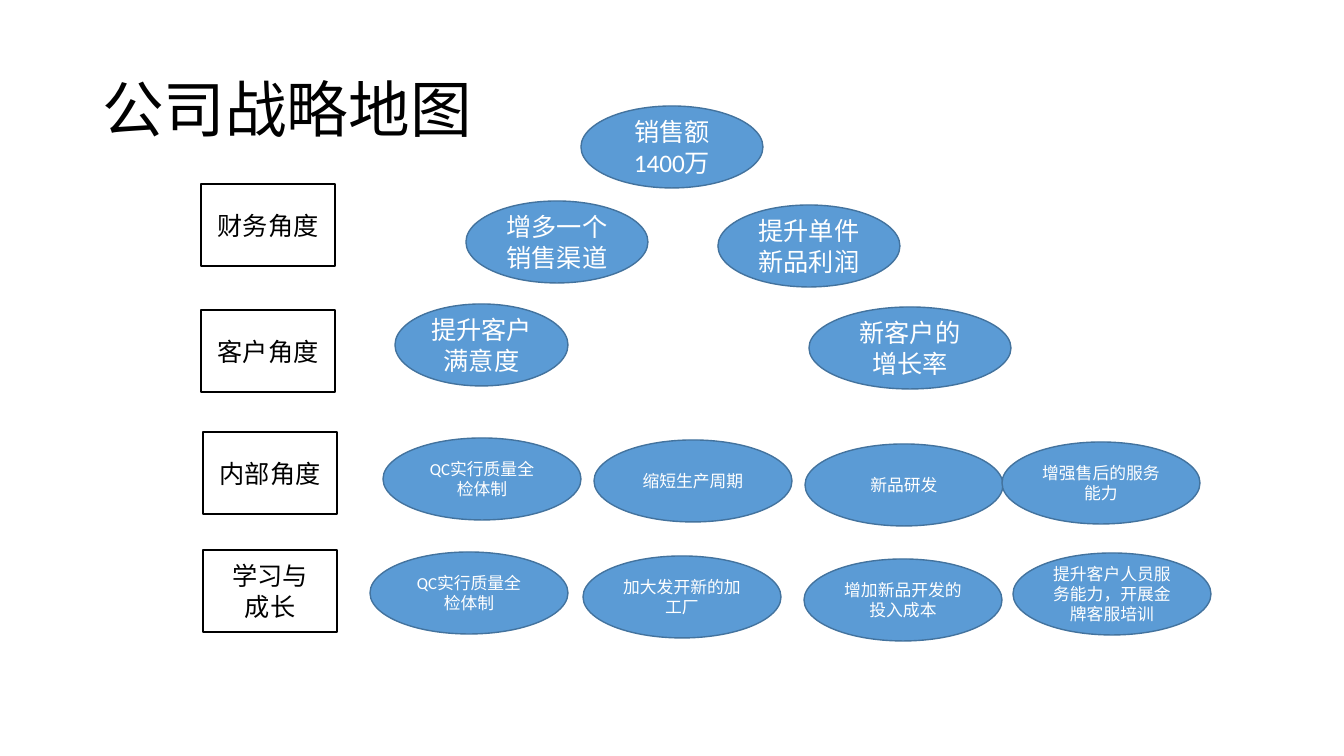
from pptx import Presentation
from pptx.dml.color import RGBColor
from pptx.enum.shapes import MSO_SHAPE
from pptx.enum.text import MSO_ANCHOR, MSO_AUTO_SIZE, PP_ALIGN
from pptx.util import Pt

RECT, OVAL = MSO_SHAPE.RECTANGLE, MSO_SHAPE.OVAL
MIDDLE, CENTER, LEFT = MSO_ANCHOR.MIDDLE, PP_ALIGN.CENTER, PP_ALIGN.LEFT
NO_FIT = MSO_AUTO_SIZE.NONE

FONT = "Calibri"
COLORS = {"goal": "5B9BD5", "goal_line": "43739E", "white": "FFFFFF", "black": "000000"}
EMU_PER_PX = 914400 / 100.8
LABEL_W, ROW_H = 134, 82

# Row: left, top, label lines, goal width, text size, goals (dx, dy, text)
ROWS = [
    (201, 184, ["财务角度"], 182, 18, [
        (380, -78, "销售额1400万"),
        (265, 17, "增多一个销售渠道"),
        (517, 21, "提升单件新品利润")]),
    (201, 310, ["客户角度"], 173, 18, [
        (194, -6, "提升客户满意度"),
        (608, -3, "新客户的增长率", 202)]),
    (203, 432, ["内部角度"], 198, 12, [
        (180, 6, "QC实行质量全检体制"),
        (391, 8, "缩短生产周期"),
        (602, 12, "新品研发"),
        (799, 10, "增强售后的服务能力")]),
    (203, 550, ["学习与", "成长"], 198, 12, [
        (167, 2, "QC实行质量全检体制"),
        (380, 6, "加大发开新的加工厂"),
        (601, 9, "增加新品开发的投入成本"),
        (810, 3, "提升客户人员服务能力，开展金牌客服培训")]),
]


def px(n):
    return round(n * EMU_PER_PX)


def rgb(name):
    return RGBColor.from_string(COLORS[name])


def write(tf, lines, size, color, align):
    tf.word_wrap = True
    tf.auto_size = NO_FIT
    tf.vertical_anchor = MIDDLE
    for i, line in enumerate(lines):
        p = tf.paragraphs[0] if i == 0 else tf.add_paragraph()
        p.alignment = align
        r = p.add_run()
        r.text = line
        r.font.name = FONT
        r.font.size = Pt(size)
        r.font.color.rgb = rgb(color)


def add_node(s, kind, box, lines, size, fill, line, color):
    sp = s.shapes.add_shape(kind, *map(px, box))
    sp.shadow.inherit = False
    sp.fill.solid()
    sp.fill.fore_color.rgb = rgb(fill)
    sp.line.color.rgb = rgb(line)
    sp.line.width = Pt(1)
    write(sp.text_frame, lines, size, color, CENTER)


def add_title(s, box, text):
    sp = s.shapes.title
    sp.left, sp.top, sp.width, sp.height = map(px, box)
    write(sp.text_frame, [text], 44, "black", LEFT)
    sp.text_frame.paragraphs[0].line_spacing = 0.9


def add_row(s, left, top, label, goal_w, size, goals):
    """Place a perspective label and its goals, offset from the label's corner."""
    add_node(s, RECT, (left, top, LABEL_W, ROW_H), label, 18, "white", "black", "black")
    for dx, dy, text, *own_w in goals:
        w = own_w[0] if own_w else goal_w
        add_node(s, OVAL, (left + dx, top + dy, w, ROW_H), [text], size,
                 "goal", "goal_line", "white")


def main():
    prs = Presentation()
    prs.slide_width, prs.slide_height = px(1344), px(756)
    s = prs.slides.add_slide(prs.slide_layouts[5])
    add_title(s, (92, 40, 1159, 146), "公司战略地图")
    for row in ROWS:
        add_row(s, *row)
    prs.save("out.pptx")


if __name__ == "__main__":
    main()
